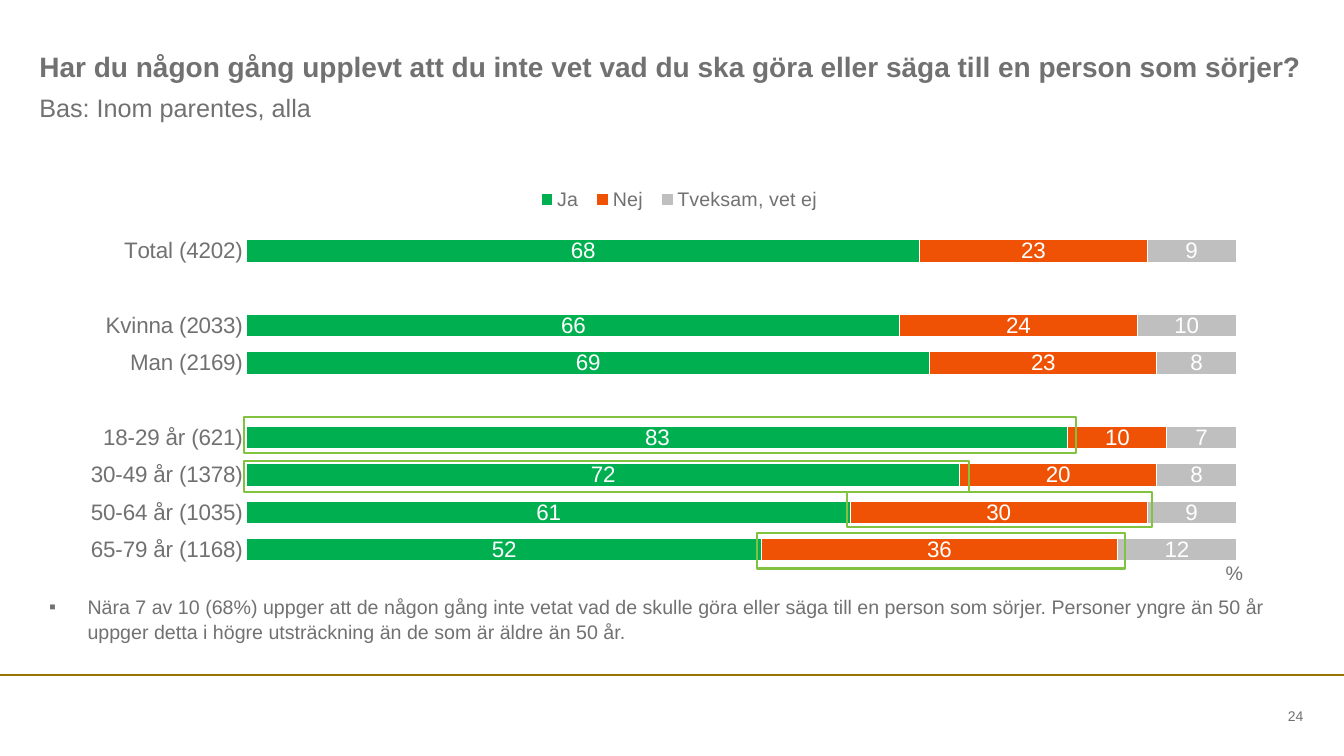
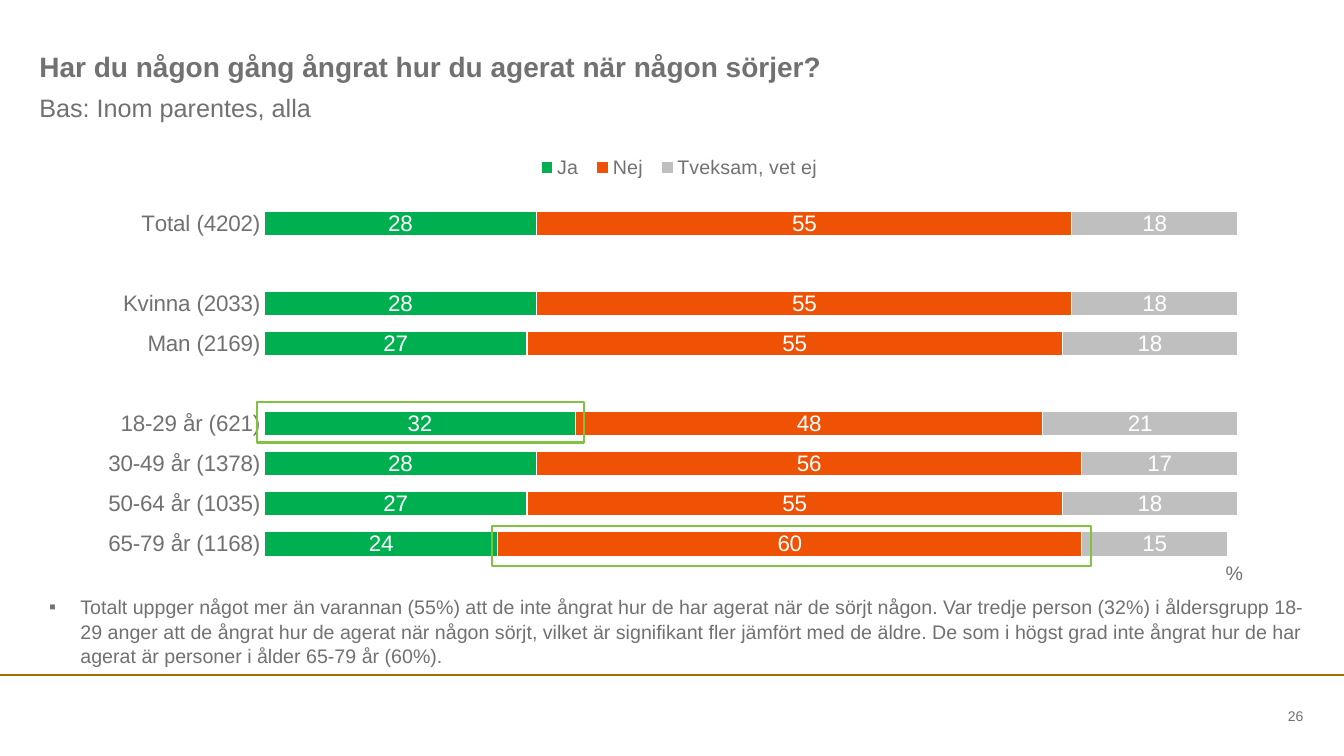
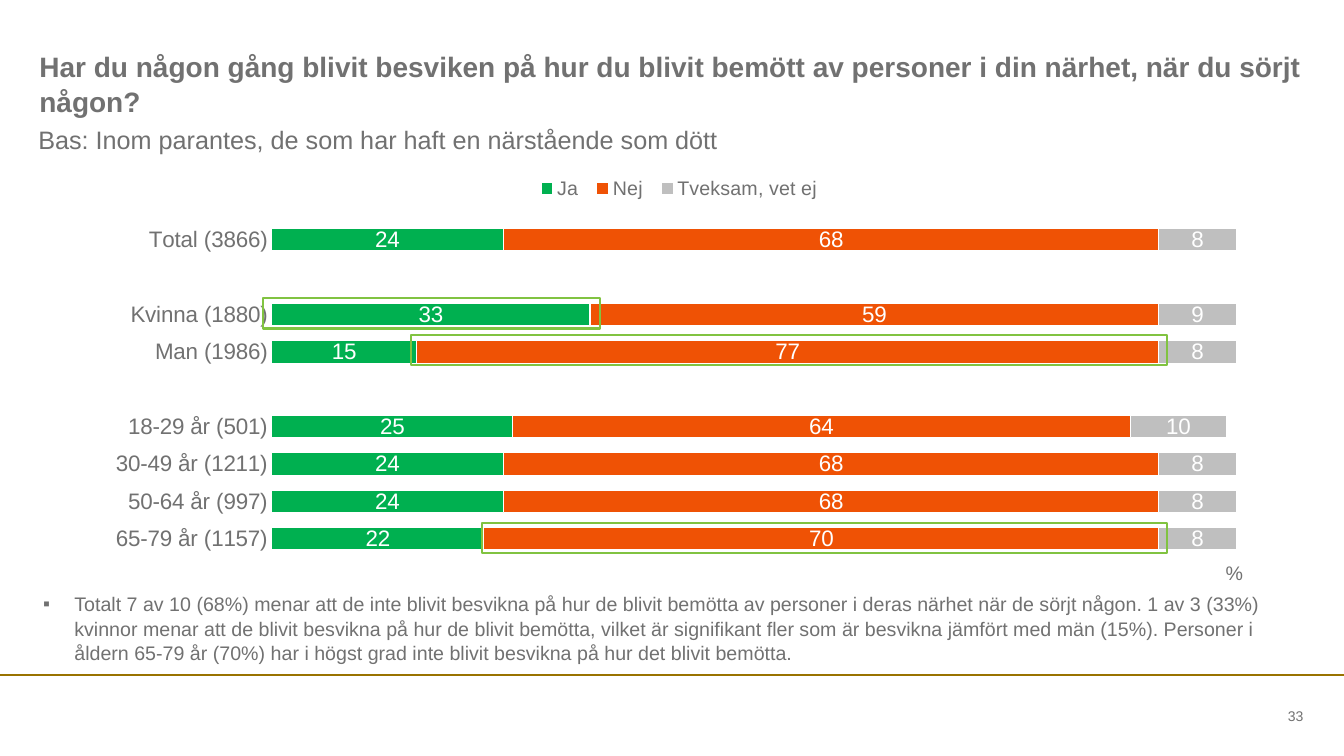
from lxml.etree import SubElement as Sub
from pptx import Presentation
from pptx.chart.data import CategoryChartData as Data
from pptx.dml.color import RGBColor
from pptx.enum.chart import XL_CHART_TYPE as Kind, XL_LABEL_POSITION as Spot
from pptx.enum.chart import XL_LEGEND_POSITION as Side, XL_TICK_MARK as Tick
from pptx.enum.shapes import MSO_CONNECTOR as Link, MSO_SHAPE as Form
from pptx.enum.text import MSO_ANCHOR as Anchor, MSO_AUTO_SIZE as Fit, PP_ALIGN as Align
from pptx.oxml import parse_xml
from pptx.oxml.ns import nsdecls, qn
from pptx.util import Inches, Pt

COLS, ROWS = 80, 45
UNIT = Inches(7.5) / ROWS
FONT, GREY, GOLD, LIME, WHITE = "Arial", "717171", "997300", "81C341", "FFFFFF"
NAMES = ["Ja ", "Nej ", "Tveksam, vet ej "]
FILLS = ["00B050", "EF5205", "BFBFBF"]
GROUPS = ["65-79 år", "50-64 år", "30-49 år", "18-29 år", "", "Man", "Kvinna", "", "Total"]
ALL = [1168, 1035, 1378, 621, None, 2169, 2033, None, 4202]
hue = RGBColor.from_string

PAGES = [
    {
        "title": "Har du någon gång upplevt att du inte vet vad du ska göra eller säga till en person som sörjer?",
        "base": "Bas: Inom parentes, alla",
        "head": (2.34, 5.4),
        "page": "24",
        "sizes": ALL,
        "vals": [
            [52, 61, 72, 83, None, 69, 66, None, 68],
            [36, 30, 20, 10, None, 23, 24, None, 23],
            [12, 9, 8, 7, None, 8, 10, None, 9],
        ],
        "chart": (10.56, 26.1),
        "plot": (0.15, 0.8),
        "note": "Nära 7 av 10 (68%) uppger att de någon gång inte vetat vad de skulle göra eller säga till en person som sörjer. Personer yngre än 50 år uppger detta i högre utsträckning än de som är äldre än 50 år.",
        "foot": (2.34, 35.04, 76.02, 3.24),
        "dent": 0.38,
        "marks": [
            (14.52, 24.84, 49.56, 2.1),
            (14.52, 27.42, 43.14, 1.86),
            (50.4, 29.28, 18.18, 2.1),
            (45.06, 31.74, 21.9, 2.1),
        ],
    },
    {
        "title": "Har du någon gång ångrat hur du agerat när någon sörjer?",
        "base": "Bas: Inom parentes, alla",
        "head": (2.34, 5.4),
        "page": "26",
        "sizes": ALL,
        "vals": [
            [24, 27, 28, 32, None, 27, 28, None, 28],
            [60, 55, 56, 48, None, 55, 55, None, 55],
            [15, 18, 17, 21, None, 18, 18, None, 18],
        ],
        "chart": (8.64, 27.96),
        "plot": (0.164, 0.783),
        "note": "Totalt uppger något mer än varannan (55%) att de inte ångrat hur de har agerat när de sörjt någon. Var tredje person (32%) i åldersgrupp 18-29 anger att de ångrat hur de agerat när någon sörjt, vilket är signifikant fler jämfört med de äldre. De som i högst grad inte ångrat hur de har agerat är personer i ålder 65-79 år (60%).",
        "foot": (2.34, 35.04, 76.02, 3.24),
        "dent": 0.31,
        "marks": [(29.28, 31.32, 35.64, 2.4), (15.3, 23.94, 19.44, 2.4)],
    },
    {
        "title": "Har du någon gång blivit besviken på hur du blivit bemött av personer i din närhet, när du sörjt någon?",
        "base": "Bas: Inom parantes, de som har haft en närstående som dött",
        "head": (2.28, 7.32),
        "page": "33",
        "sizes": [1157, 997, 1211, 501, None, 1986, 1880, None, 3866],
        "vals": [
            [22, 24, 24, 25, None, 15, 33, None, 24],
            [70, 68, 68, 64, None, 77, 59, None, 68],
            [8, 8, 8, 10, None, 8, 9, None, 8],
        ],
        "chart": (9.9, 26.1),
        "plot": (0.17, 0.776),
        "note": "Totalt 7 av 10 (68%) menar att de inte blivit besvikna på hur de blivit bemötta av personer i deras närhet när de sörjt någon. 1 av 3 (33%) kvinnor menar att de blivit besvikna på hur de blivit bemötta, vilket är signifikant fler som är besvikna jämfört med män (15%). Personer i åldern 65-79 år (70%) har i högst grad inte blivit besvikna på hur det blivit bemötta.",
        "foot": (1.98, 34.86, 76.02, 5.46),
        "dent": 0.31,
        "marks": [
            (15.66, 17.76, 20.04, 1.8),
            (24.48, 19.92, 45, 1.8),
            (28.68, 31.14, 40.8, 1.8),
        ],
    },
]
PAGES[0]["plot"] = (0.15, 0.796)


def grid(*cells):
    return [round(cell * UNIT) for cell in cells]


def write(box, text, size, bold=False, align=Align.LEFT, anchor=Anchor.TOP, pad=0, dent=0):
    frame = box.text_frame
    frame.text = text
    frame.word_wrap = True
    frame.auto_size = Fit.NONE
    frame.vertical_anchor = anchor
    frame.margin_left = frame.margin_right = Inches(2 * pad)
    frame.margin_top = frame.margin_bottom = Inches(pad)
    para = frame.paragraphs[0]
    para.alignment = align
    para.line_spacing = 1.05
    if dent:
        props = para._p.get_or_add_pPr()
        props.set("marL", str(Inches(dent)))
        props.set("indent", str(-Inches(dent)))
        Sub(props, qn("a:buFont")).set("typeface", FONT)
        Sub(props, qn("a:buChar")).set("char", "▪")
    font = para.runs[0].font
    font.name, font.size, font.bold = FONT, Pt(size), bold
    font.color.rgb = hue(GREY)


deck = Presentation()
deck.slide_width, deck.slide_height = grid(COLS, ROWS)

for page in PAGES:
    slide = deck.slides.add_slide(deck.slide_layouts[5])
    shapes = slide.shapes

    rule = shapes.add_connector(Link.STRAIGHT, *grid(0, 40.2, COLS, 40.2))
    rule.line.color.rgb = hue(GOLD)
    rule.line.width = Pt(1.5)
    Sub(rule._element.spPr, qn("a:effectLst"))

    title = shapes.title
    title.left, title.top, title.width, title.height = grid(2.34, 2.82, 75.24, 2.64)
    write(title, page["title"], 20, bold=True)
    write(shapes.add_textbox(*grid(71.22, 41.94, 6.36, 1.32)), page["page"], 10,
          align=Align.RIGHT, anchor=Anchor.MIDDLE)
    write(shapes.add_textbox(*grid(*page["head"], 75.3, 2.58)), page["base"], 18)

    data = Data()
    data.categories = [f"{group} ({size})" if size else ""
                       for group, size in zip(GROUPS, page["sizes"])]
    for name, vals in zip(NAMES, page["vals"]):
        data.add_series(name, vals)
    top, tall = page["chart"]
    chart = shapes.add_chart(Kind.BAR_STACKED, *grid(3.6, top, 73.98, tall), data).chart
    chart.has_title = False
    chart.font.name, chart.font.size = FONT, Pt(18)
    chart.font.color.rgb = hue(GREY)

    chart.has_legend = True
    chart.legend.position = Side.TOP
    chart.legend.include_in_layout = False
    chart.legend.font.size = Pt(14)
    chart.legend.font.name = FONT
    chart.legend.font.color.rgb = hue(GREY)

    axis = chart.category_axis
    axis.major_tick_mark = axis.minor_tick_mark = Tick.NONE
    axis.format.line.fill.background()
    axis.tick_labels.font.size = Pt(16)
    axis.tick_labels.font.name = FONT
    axis.tick_labels.font.color.rgb = hue(GREY)
    scale = chart.value_axis
    scale.minimum_scale, scale.maximum_scale = 0, 100
    scale.has_major_gridlines = False
    scale.visible = False

    plot = chart.plots[0]
    plot.gap_width, plot.overlap = 66, 100
    plot.vary_by_categories = False
    for bar, fill in zip(plot.series, FILLS):
        bar.format.fill.solid()
        bar.format.fill.fore_color.rgb = hue(fill)
        bar.format.line.color.rgb = hue(WHITE)
        bar.format.line.width = Pt(0.75)
        tags = bar.data_labels
        tags.show_value = True
        tags.position = Spot.CENTER
        tags.font.name, tags.font.size = FONT, Pt(16)
        tags.font.color.rgb = hue(WHITE)

    area = chart._chartSpace.find(".//" + qn("c:plotArea"))
    for old in area.findall(qn("c:layout")):
        area.remove(old)
    left, wide = page["plot"]
    area.insert(0, parse_xml(
        f'<c:layout {nsdecls("c")}><c:manualLayout><c:layoutTarget val="inner"/>'
        '<c:xMode val="edge"/><c:yMode val="edge"/>'
        f'<c:x val="{left}"/><c:y val="0.125"/><c:w val="{wide}"/><c:h val="0.767"/>'
        '</c:manualLayout></c:layout>'))

    write(shapes.add_textbox(*grid(72.96, 33.3, 3, 1.44)), "%", 14)
    write(shapes.add_textbox(*grid(*page["foot"])), page["note"], 14,
          pad=0.05, dent=page["dent"])

    for mark in page["marks"]:
        frame = shapes.add_shape(Form.RECTANGLE, *grid(*mark))
        frame.shadow.inherit = False
        frame.fill.background()
        frame.line.color.rgb = hue(LIME)
        frame.line.width = Pt(1.5)

deck.save("out.pptx")
